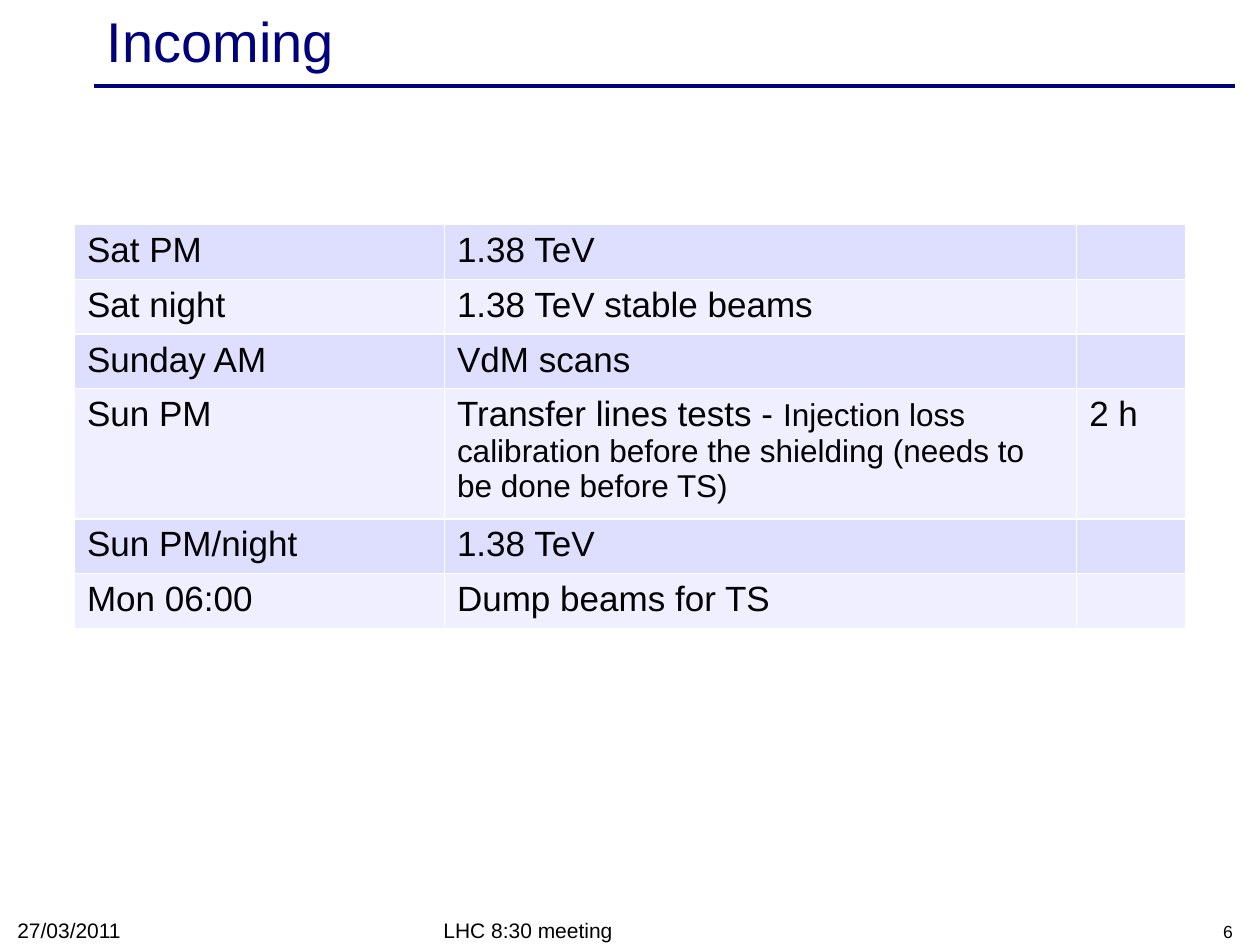
from pptx import Presentation
from pptx.dml.color import RGBColor
from pptx.enum.shapes import MSO_CONNECTOR
from pptx.enum.text import MSO_ANCHOR, PP_ALIGN
from pptx.oxml import parse_xml
from pptx.oxml.ns import nsdecls
from pptx.util import Cm, Pt

NAVY = RGBColor(0x00, 0x00, 0x7D)
BLACK = RGBColor(0x00, 0x00, 0x00)
WHITE = RGBColor(0xFF, 0xFF, 0xFF)
LAVENDER = RGBColor(0xDE, 0xDE, 0xFF)
PALE = RGBColor(0xEF, 0xEF, 0xFF)
FONT = "Arial"

SCHEDULE = [
    (["Sat PM"], ["1.38 TeV"], []),
    (["Sat night"], ["1.38 TeV stable beams"], []),
    (["Sunday AM"], ["VdM scans"], []),
    (["Sun PM"],
     ["Transfer lines tests - ",
      "Injection loss calibration before the shielding (needs to be done before TS)"],
     ["2 h"]),
    (["Sun PM/night"], ["1.38 TeV"], []),
    (["Mon 06:00"], ["Dump beams for TS"], []),
]
COLUMN_SHARES = [0.333, 0.569, 0.098]
RUN_SIZES = [20, 18]


def style_font(font, size, color=BLACK):
    font.name = FONT
    font.size = Pt(size)
    font.color.rgb = color


def add_label(page, left, top, width, height, text, size,
              color=BLACK, align=PP_ALIGN.LEFT, anchor=MSO_ANCHOR.BOTTOM):
    box = page.shapes.add_textbox(left, top, width, height)
    frame = box.text_frame
    frame.word_wrap = True
    frame.vertical_anchor = anchor
    frame.text = text
    para = frame.paragraphs[0]
    para.alignment = align
    style_font(para.runs[0].font, size, color)


def add_heading(page, left, top, width, height):
    rule_top = top + height + Cm(0.2)
    rule = page.shapes.add_connector(
        MSO_CONNECTOR.STRAIGHT, left, rule_top, left + width, rule_top)
    rule.line.color.rgb = NAVY
    rule.line.width = Pt(2)
    rule._element.spPr.append(parse_xml(f"<a:effectLst {nsdecls('a')}/>"))
    add_label(page, left, top, width, height, "Incoming", 32,
              NAVY, anchor=MSO_ANCHOR.MIDDLE)


def set_borders(cell):
    properties = cell._tc.get_or_add_tcPr()
    for position, side in enumerate(("lnL", "lnR", "lnT", "lnB")):
        properties.insert(position, parse_xml(
            f'<a:{side} {nsdecls("a")} w="{Pt(1)}"><a:solidFill>'
            f'<a:srgbClr val="{WHITE}"/></a:solidFill></a:{side}>'))


def fill_cell(cell, texts, color):
    cell.fill.solid()
    cell.fill.fore_color.rgb = color
    set_borders(cell)
    para = cell.text_frame.paragraphs[0]
    para.alignment = PP_ALIGN.LEFT
    for text, size in zip(texts, RUN_SIZES):
        span = para.add_run()
        span.text = text
        style_font(span.font, size)


def add_schedule(page, left, top, width, row_height):
    table = page.shapes.add_table(
        len(SCHEDULE), len(COLUMN_SHARES), left, top,
        width, row_height * len(SCHEDULE)).table
    table.first_row = False
    table.horz_banding = False
    for column, share in zip(table.columns, COLUMN_SHARES):
        column.width = int(width * share)
    for index, (row, entries) in enumerate(zip(table.rows, SCHEDULE)):
        row.height = row_height
        for cell, texts in zip(row.cells, entries):
            fill_cell(cell, texts, PALE if index % 2 else LAVENDER)


def add_footer(page, left, top, width, height):
    part = Cm(5.92)
    middle = Cm(8.05)
    add_label(page, left, top, part, height, "27/03/2011", 12)
    add_label(page, left + Cm(8.59), top, middle, height, "LHC 8:30 meeting", 12)
    add_label(page, left + width - part, top, part, height, "6", 10,
              align=PP_ALIGN.RIGHT)


def main():
    deck = Presentation()
    deck.slide_width = Cm(25.4)
    deck.slide_height = Cm(19.05)
    page = deck.slides.add_slide(deck.slide_layouts[6])
    add_heading(page, Cm(1.9), Cm(0.08), Cm(23), Cm(1.45))
    add_schedule(page, Cm(1.5), Cm(4.53), Cm(22.4), Cm(1.04))
    add_footer(page, Cm(0.1), Cm(18.4), Cm(25), Cm(0.72))
    deck.save("out.pptx")


if __name__ == "__main__":
    main()
